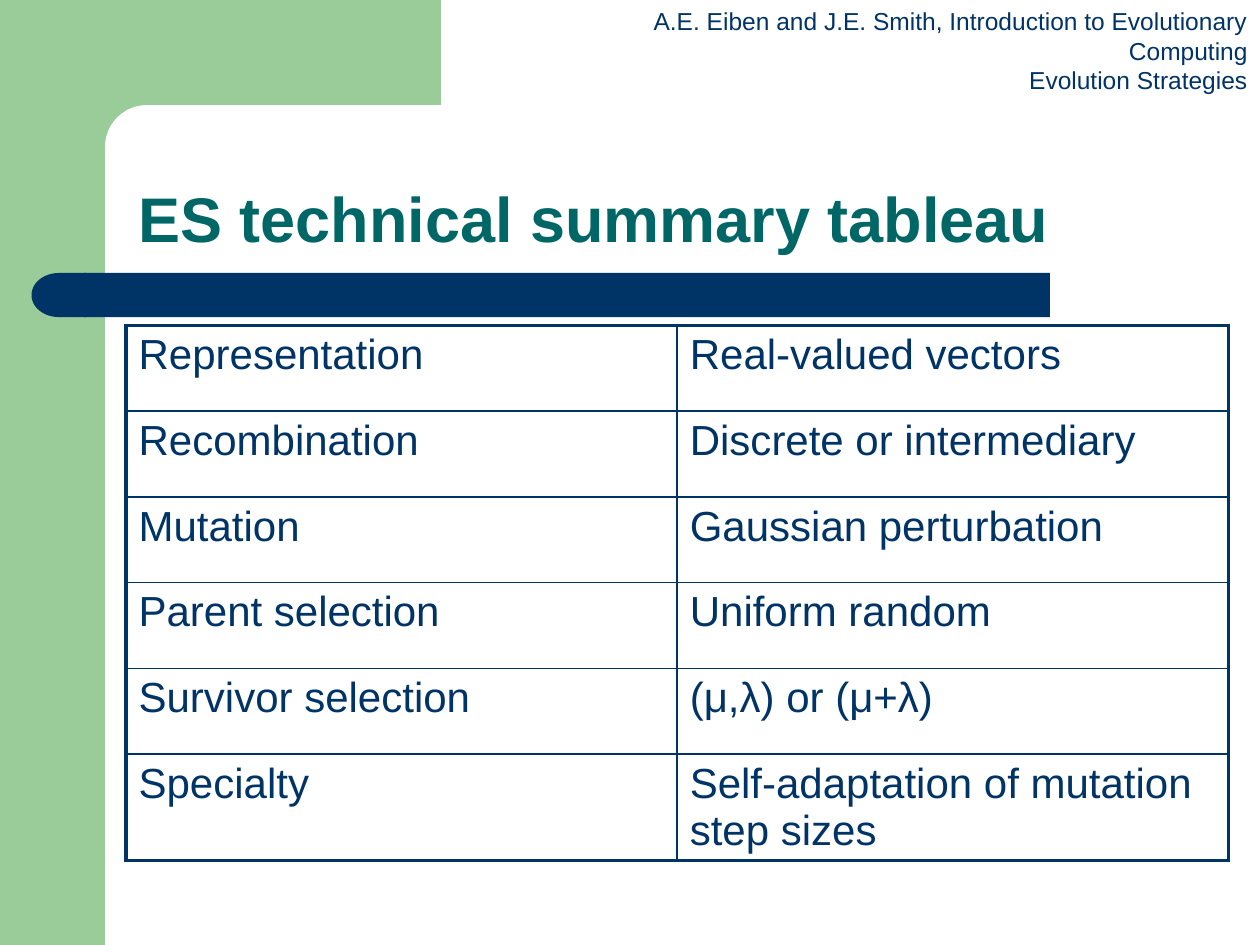
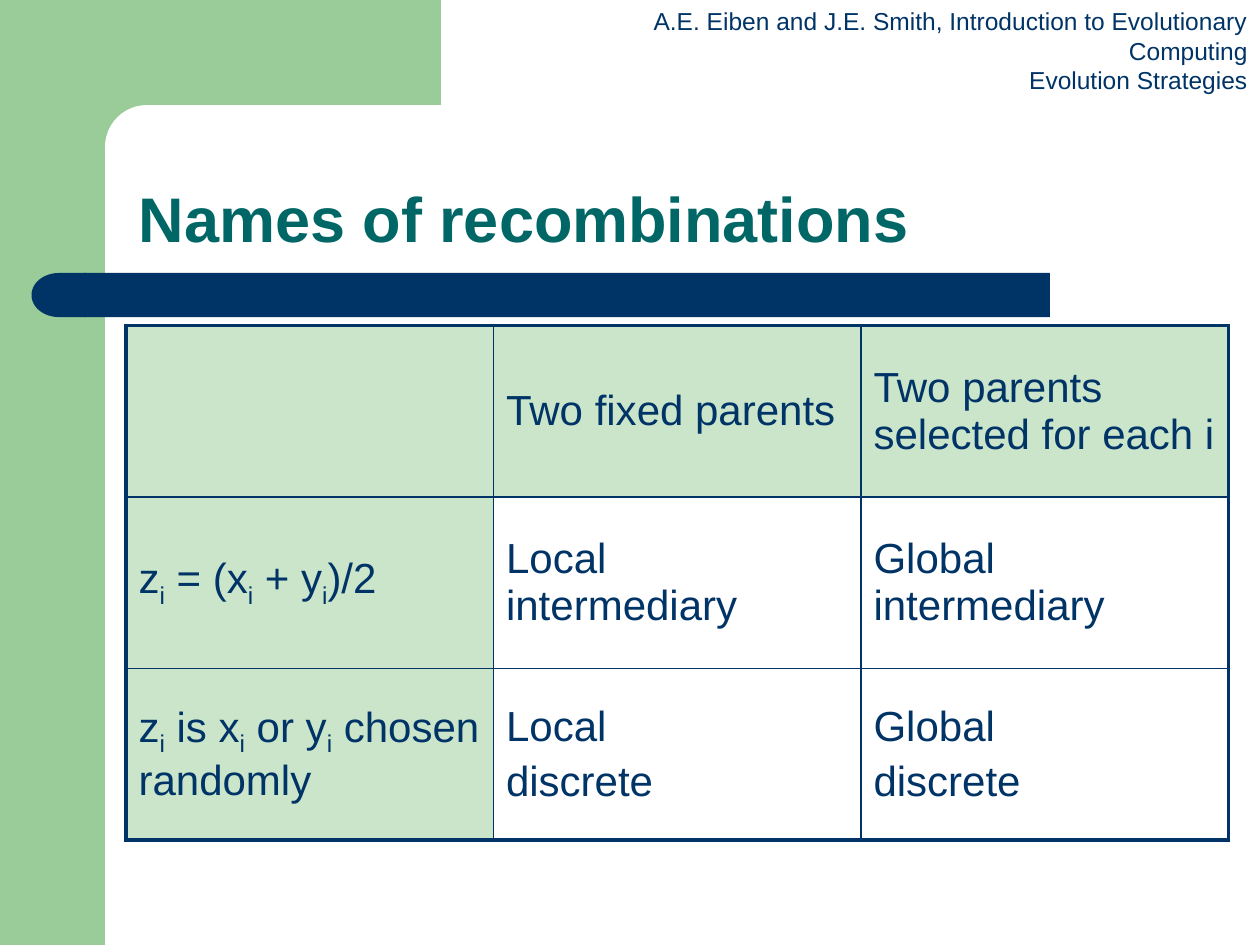
"""Two table slides on evolution strategies in a shared green and navy frame."""
from lxml.etree import SubElement
from pptx import Presentation
from pptx.dml.color import RGBColor
from pptx.enum.shapes import MSO_SHAPE
from pptx.enum.text import MSO_ANCHOR, MSO_AUTO_SIZE, PP_ALIGN
from pptx.oxml import parse_xml
from pptx.oxml.ns import nsdecls, qn
from pptx.util import Inches, Pt

GREEN = RGBColor(0x99, 0xCC, 0x99)
NAVY = RGBColor(0x00, 0x33, 0x66)
TEAL = RGBColor(0x00, 0x66, 0x66)
WHITE = RGBColor(0xFF, 0xFF, 0xFF)
FONT = "Arial"
GRID = Inches(1) // 12
COLUMNS, ROWS = 120, 90
TABLE_LEFT, TABLE_TOP, TABLE_WIDTH, TABLE_HEIGHT = 12, 31, 105, 49
OUTER_LINE, INNER_LINE = Pt(2.25), Pt(1)

HEADER = [
    "A.E. Eiben and J.E. Smith, Introduction to Evolutionary Computing",
    "Evolution Strategies",
]
SUMMARY = [
    ["Representation", "Real-valued vectors"],
    ["Recombination", "Discrete or intermediary"],
    ["Mutation", "Gaussian perturbation"],
    ["Parent selection", "Uniform random"],
    ["Survivor selection", "(μ,λ) or (μ+λ)"],
    ["Specialty", "Self-adaptation of mutation step sizes"],
]
RECOMBINATIONS = [
    ["", "Two fixed parents", "Two parents selected for each i"],
    ["z_i = (x_i + y_i)/2", "Local intermediary", "Global intermediary"],
    ["z_i is x_i or y_i chosen randomly", "Local\ndiscrete", "Global\ndiscrete"],
]


def on_grid(*cells):
    """Turn grid counts into whole lengths."""
    return [int(cell * GRID) for cell in cells]


def style_font(paragraph, size, color, bold=False):
    """Give a paragraph its typeface, size, colour and weight."""
    font = paragraph.font
    font.name, font.size, font.bold = FONT, Pt(size), bold
    font.color.rgb = color


def add_block(page, kind, place, color, rounding=None):
    """Add a plain filled shape without outline."""
    block = page.shapes.add_shape(kind, *on_grid(*place))
    block.shadow.inherit = False
    block.fill.solid()
    block.fill.fore_color.rgb = color
    block.line.fill.background()
    if rounding is not None:
        block.adjustments[0] = rounding
    return block


def add_header(page):
    """Add the right-aligned book and chapter lines."""
    box = page.shapes.add_textbox(*on_grid(49.5, 0, 70.5, 6.8))
    frame = box.text_frame
    frame.word_wrap = True
    frame.text = "\n".join(HEADER)
    for paragraph in frame.paragraphs:
        paragraph.alignment = PP_ALIGN.RIGHT
        style_font(paragraph, 14, NAVY)
    return box


def move_frame_to_layout(page):
    """Draw the frame on a page and hand it to the page's layout."""
    layout = page.slide_layout
    for holder in list(layout.placeholders)[1:]:
        layout.shapes.element.remove(holder.element)
    cap = add_block(page, MSO_SHAPE.FLOWCHART_DELAY, (3, 26, 5.2, 4.2), NAVY)
    cap.element.spPr.get_or_add_xfrm().set("flipH", "1")
    frame = [
        add_block(page, MSO_SHAPE.RECTANGLE, (0, 0, 10, ROWS), GREEN),
        add_block(page, MSO_SHAPE.RECTANGLE, (9, 0, 33, 14), GREEN),
        add_block(page, MSO_SHAPE.ROUNDED_RECTANGLE, (10, 10, 67, 8), WHITE, 0.5),
        add_block(page, MSO_SHAPE.ROUNDED_RECTANGLE, (8, 26, 92, 4.2), NAVY, 0),
        cap,
        add_header(page),
    ]
    for shape in frame:
        layout.shapes.element.append(shape.element)


def set_title(page, words):
    """Place and format the title placeholder."""
    title = page.shapes.title
    title.left, title.top, title.width, title.height = on_grid(12, 10, 105, 15)
    frame = title.text_frame
    frame.text = words
    frame.auto_size = MSO_AUTO_SIZE.NONE
    frame.vertical_anchor = MSO_ANCHOR.BOTTOM
    paragraph = frame.paragraphs[0]
    paragraph.alignment = PP_ALIGN.LEFT
    paragraph.line_spacing = 0.9
    style_font(paragraph, 36, TEAL, bold=True)


def add_spans(paragraph, words):
    """Write words, lowering each letter that follows an underscore."""
    first, *rest = words.split("_")
    paragraph.add_run().text = first
    for part in rest:
        lowered = paragraph.add_run()
        lowered.text = part[0]
        lowered.font._element.set("baseline", "-25000")
        paragraph.add_run().text = part[1:]


def write_cell(cell, words, anchor):
    """Fill a cell with one paragraph per line of words."""
    cell.vertical_anchor = anchor
    frame = cell.text_frame
    for index, line in enumerate(words.split("\n")):
        paragraph = frame.add_paragraph() if index else frame.paragraphs[0]
        paragraph.space_before = Pt(4.8)
        style_font(paragraph, 24, NAVY)
        if line:
            add_spans(paragraph, line)


def shade_cell(cell, shaded):
    """Tint a cell half-transparent green, or leave it clear."""
    if not shaded:
        cell.fill.background()
        return
    cell.fill.solid()
    cell.fill.fore_color.rgb = GREEN
    color = cell._tc.tcPr.find(f"{qn('a:solidFill')}/{qn('a:srgbClr')}")
    SubElement(color, qn("a:alpha"), val="50000")


def border_cell(cell, outer_sides):
    """Draw the four borders, heavier on the table's outer sides."""
    properties = cell._tc.get_or_add_tcPr()
    for index, (side, outer) in enumerate(outer_sides.items()):
        width = OUTER_LINE if outer else INNER_LINE
        properties.insert(index, parse_xml(
            f'<a:ln{side} {nsdecls("a")} w="{int(width)}"><a:solidFill>'
            f'<a:srgbClr val="{NAVY}"/></a:solidFill></a:ln{side}>'))


def add_grid_table(page, rows, anchor=MSO_ANCHOR.TOP, headed=False):
    """Add a table of equal columns and rows, with tinted headings if asked."""
    row_count, column_count = len(rows), len(rows[0])
    place = on_grid(TABLE_LEFT, TABLE_TOP, TABLE_WIDTH, TABLE_HEIGHT)
    table = page.shapes.add_table(row_count, column_count, *place).table
    table.first_row = table.horz_banding = False
    for row, line in enumerate(rows):
        for column, words in enumerate(line):
            cell = table.cell(row, column)
            write_cell(cell, words, anchor)
            shade_cell(cell, headed and 0 in (row, column))
            border_cell(cell, {
                "L": column == 0,
                "R": column == column_count - 1,
                "T": row == 0,
                "B": row == row_count - 1,
            })


def main():
    """Build and save the deck."""
    deck = Presentation()
    deck.slide_width, deck.slide_height = on_grid(COLUMNS, ROWS)
    title_only = deck.slide_layouts[5]

    summary_page = deck.slides.add_slide(title_only)
    move_frame_to_layout(summary_page)
    set_title(summary_page, "ES technical summary tableau")
    add_grid_table(summary_page, SUMMARY)

    names_page = deck.slides.add_slide(title_only)
    set_title(names_page, "Names of recombinations")
    add_grid_table(names_page, RECOMBINATIONS, MSO_ANCHOR.MIDDLE, headed=True)

    deck.save("out.pptx")


if __name__ == "__main__":
    main()
